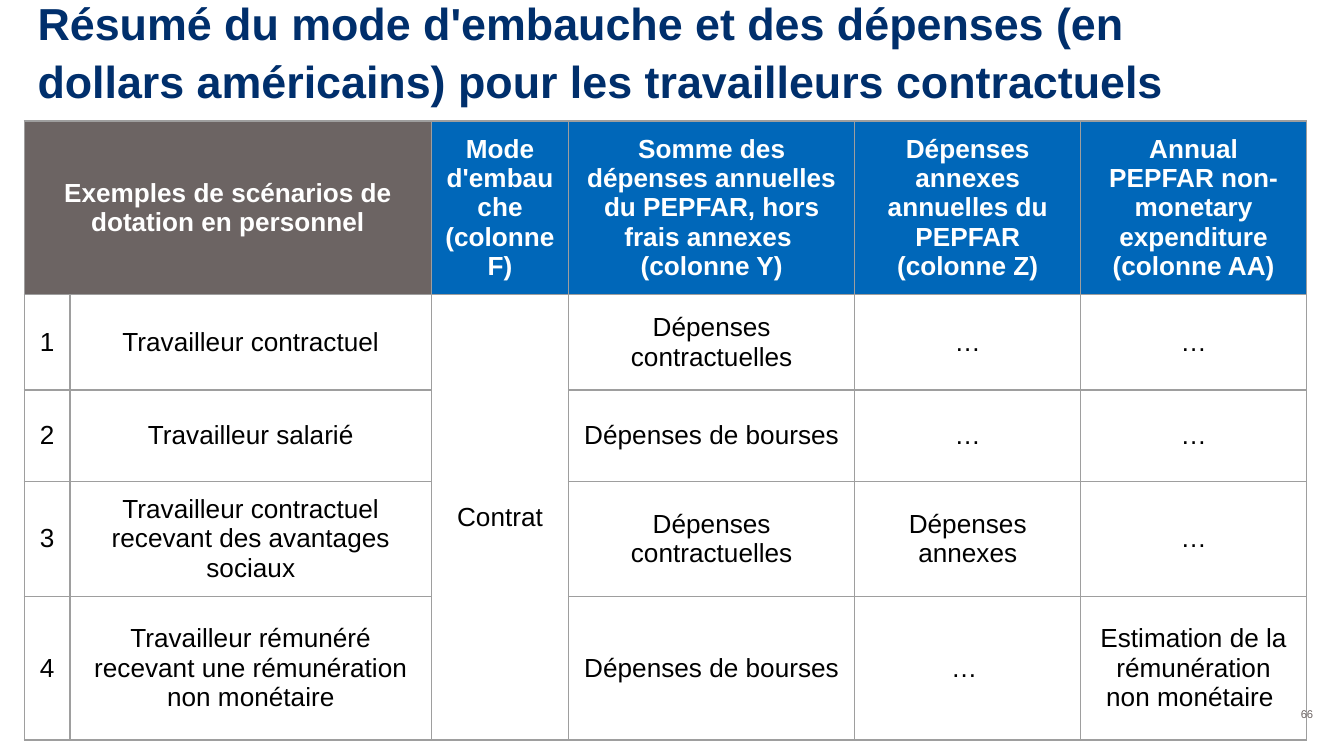
from lxml import etree
from pptx import Presentation
from pptx.dml.color import RGBColor
from pptx.enum.text import MSO_ANCHOR, PP_ALIGN
from pptx.oxml.ns import qn
from pptx.util import Pt

TOP, MIDDLE, BOTTOM = MSO_ANCHOR.TOP, MSO_ANCHOR.MIDDLE, MSO_ANCHOR.BOTTOM
LEFT, CENTER, RIGHT = PP_ALIGN.LEFT, PP_ALIGN.CENTER, PP_ALIGN.RIGHT

THEME = {
    "font": "Arial",
    "navy": "002F6C", "blue": "0067B9", "gray": "6C6463",
    "white": "FFFFFF", "black": "000000", "border": "9E9E9E",
    "title_size": 24, "table_size": 14, "number_size": 6,
    "border_width": 0.75,
}


def write_text(frame, text, size, color, bold, align, spacing=None):
    for index, line in enumerate(text.split("\n")):
        para = frame.add_paragraph() if index else frame.paragraphs[0]
        para.alignment = align
        if spacing:
            para.line_spacing = spacing
        span = para.add_run()
        span.text = line
        style = {"name": THEME["font"], "size": Pt(THEME[size]), "bold": bold}
        for name, value in style.items():
            setattr(span.font, name, value)
        span.font.color.rgb = RGBColor.from_string(THEME[color])


def add_borders(cell):
    properties = cell._tc.get_or_add_tcPr()
    for position, side in enumerate(("lnL", "lnR", "lnT", "lnB")):
        line = etree.Element(qn(f"a:{side}"), w=str(Pt(THEME["border_width"])))
        fill = etree.SubElement(line, qn("a:solidFill"))
        etree.SubElement(fill, qn("a:srgbClr"), val=THEME["border"])
        properties.insert(position, line)


deck = Presentation()
deck.slide_width, deck.slide_height = Pt(720), Pt(405)
page = deck.slides.add_slide(deck.slide_layouts[6])

title = "Résumé du mode d'embauche et des dépenses (en dollars américains) pour les travailleurs contractuels"
table_left, table_top = 13, 64.8
column_widths = [24.5, 193.7, 73.4, 153.4, 121, 121]
row_heights = [92.6, 51, 49, 61.6, 77]
rows = [
    ["Exemples de scénarios de dotation en personnel", "",
     "Mode d'embauche (colonne F)",
     "Somme des dépenses annuelles du PEPFAR, hors frais annexes \n(colonne Y)",
     "Dépenses annexes annuelles du PEPFAR (colonne Z)",
     "Annual PEPFAR non-monetary expenditure\n(colonne AA)"],
    ["1", "Travailleur contractuel", "Contrat", "Dépenses contractuelles", "…", "…"],
    ["2", "Travailleur salarié", "", "Dépenses de bourses", "…", "…"],
    ["3", "Travailleur contractuel recevant des avantages sociaux", "",
     "Dépenses contractuelles", "Dépenses annexes", "…"],
    ["4", "Travailleur rémunéré recevant une rémunération non monétaire", "",
     "Dépenses de bourses", "… ", "Estimation de la rémunération non monétaire "],
]

frame = page.shapes.add_table(
    len(rows), len(column_widths), Pt(table_left), Pt(table_top),
    Pt(sum(column_widths)), Pt(sum(row_heights)))
table = frame.table
table.first_row = False
table.horz_banding = False
for column, width in zip(table.columns, column_widths):
    column.width = Pt(width)
for row, height in zip(table.rows, row_heights):
    row.height = Pt(height)

table.cell(0, 0).merge(table.cell(0, 1))
table.cell(1, 2).merge(table.cell(4, 2))

for row_index, texts in enumerate(rows):
    header = row_index == 0
    for column_index, text in enumerate(texts):
        cell = table.cell(row_index, column_index)
        cell_format = {"vertical_anchor": MIDDLE, "margin_left": Pt(7.2), "margin_right": Pt(7.2),
                       "margin_top": Pt(7.2), "margin_bottom": Pt(7.2)}
        for name, value in cell_format.items():
            setattr(cell, name, value)
        if header:
            cell.fill.solid()
            fill_color = "gray" if column_index < 2 else "blue"
            cell.fill.fore_color.rgb = RGBColor.from_string(THEME[fill_color])
        else:
            cell.fill.background()
        add_borders(cell)
        if text:
            write_text(cell.text_frame, text, "table_size",
                       "white" if header else "black", header, CENTER)

labels = [
    (title, (13, 14.4, 671, 50.4), 7.2, BOTTOM, ("title_size", "navy", True, LEFT, 1.08)),
    ("66", (667.4, 367.2, 43.2, 31), 3.6, MIDDLE, ("number_size", "gray", False, RIGHT)),
]
for text, place, inset, anchor, style in labels:
    box = page.shapes.add_textbox(*map(Pt, place))
    box_format = {"word_wrap": True, "vertical_anchor": anchor,
                  "margin_left": Pt(7.2), "margin_right": Pt(7.2),
                  "margin_top": Pt(inset), "margin_bottom": Pt(inset)}
    for name, value in box_format.items():
        setattr(box.text_frame, name, value)
    write_text(box.text_frame, text, *style)

deck.save("out.pptx")
